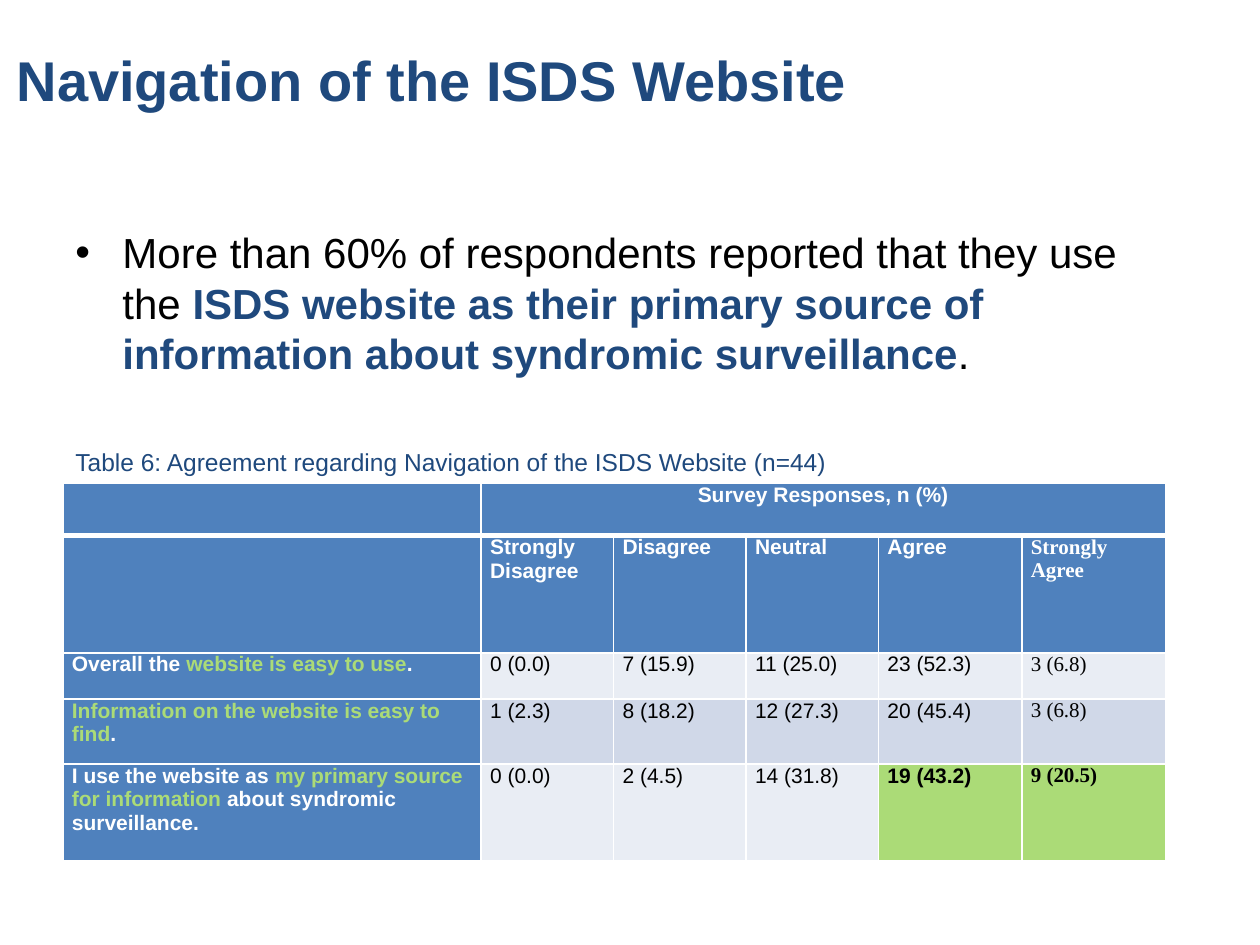
"""Build the slide on navigation of the ISDS website."""
from lxml import etree
from pptx import Presentation
from pptx.dml.color import RGBColor
from pptx.enum.text import MSO_ANCHOR, PP_ALIGN
from pptx.oxml.ns import qn
from pptx.util import Cm, Pt

MIDDLE, TOP = MSO_ANCHOR.MIDDLE, MSO_ANCHOR.TOP
LEFT, CENTER = PP_ALIGN.LEFT, PP_ALIGN.CENTER
NAVY, BLUE, GREEN, WHITE, BLACK = "1F497D", "4F81BD", "ABDB77", "FFFFFF", "000000"
BANDS = ["E9EDF4", "D0D8E8"]


def rgb(value):
    """Turn a hex string into a colour."""
    return RGBColor.from_string(value)


def write(paragraph, text, size, color, accent=NAVY, bold=False, accent_bold=True, name="Arial"):
    """Add runs to a paragraph; parts between asterisks take the accent."""
    for index, part in enumerate(text.split("*")):
        if not part:
            continue
        marked = index % 2 == 1
        run = paragraph.add_run()
        run.text = part
        formats = {"name": name, "size": Pt(size), "bold": accent_bold if marked else bold}
        for key, value in formats.items():
            setattr(run.font, key, value)
        run.font.color.rgb = rgb(accent if marked else color)


prs = Presentation()
prs.slide_width, prs.slide_height = Cm(25.4), Cm(19.05)
slide = prs.slides.add_slide(prs.slide_layouts[5])

title = slide.shapes.title
place = {"left": Cm(0.08), "top": Cm(0), "width": Cm(18.49), "height": Cm(3.18)}
for key, value in place.items():
    setattr(title, key, value)
title.text_frame.vertical_anchor = MIDDLE
title.text_frame.word_wrap = True
heading = title.text_frame.paragraphs[0]
heading.alignment = LEFT
write(heading, "Navigation of the ISDS Website", 32, NAVY, bold=True)

rows = [
    ["", "Survey Responses, n (%)", "", "", "", ""],
    ["", "Strongly Disagree", "Disagree", "Neutral", "Agree", "Strongly Agree"],
    ["Overall the *website is easy to use*.",
     "0 (0.0)", "7 (15.9)", "11 (25.0)", "23 (52.3)", "3 (6.8)"],
    ["*Information on the website is easy to find*.",
     "1 (2.3)", "8 (18.2)", "12 (27.3)", "20 (45.4)", "3 (6.8)"],
    ["I use the website as *my primary source for information *about syndromic surveillance.",
     "0 (0.0)", "2 (4.5)", "14 (31.8)", "19 (43.2)", "9 (20.5)"],
]
column_widths = [8.43, 2.67, 2.67, 2.67, 2.89, 2.89]
row_heights = [1.05, 2.36, 0.93, 1.31, 1.95]
responses = slide.shapes.add_table(
    len(rows), len(column_widths), Cm(1.27), Cm(9.75),
    Cm(sum(column_widths)), Cm(sum(row_heights))).table
for column, width in zip(responses.columns, column_widths):
    column.width = Cm(width)
for row, height in zip(responses.rows, row_heights):
    row.height = Cm(height)
responses.cell(0, 1).merge(responses.cell(0, 5))

for r, texts in enumerate(rows):
    for c, text in enumerate(texts):
        cell = responses.cell(r, c)
        header = r < 2 or c == 0
        highlight = r == 4 and c >= 4
        cell.fill.solid()
        cell.fill.fore_color.rgb = rgb(BLUE if header else GREEN if highlight else BANDS[r % 2])
        edges = {"lnL": 1, "lnR": 1, "lnT": 3 if r == 1 else 1, "lnB": 3 if r == 0 else 1}
        properties = cell._tc.get_or_add_tcPr()
        for position, (edge, points) in enumerate(edges.items()):
            line = etree.Element(qn(f"a:{edge}"), w=str(Pt(points)))
            paint = etree.SubElement(line, qn("a:solidFill"))
            etree.SubElement(paint, qn("a:srgbClr"), val=WHITE)
            properties.insert(position, line)
        if text:
            layout = {"margin_left": Cm(0.18), "margin_right": Cm(0.18),
                      "margin_top": 0, "margin_bottom": 0, "vertical_anchor": TOP}
            for key, value in layout.items():
                setattr(cell, key, value)
            paragraph = cell.text_frame.paragraphs[0]
            paragraph.alignment = CENTER if r == 0 else LEFT
            write(paragraph, text, 12, WHITE if header else BLACK, accent=GREEN,
                  bold=header or highlight, name="Times New Roman" if c == 5 else "Arial")

caption = slide.shapes.add_textbox(Cm(1.27), Cm(8.89), Cm(19.96), Cm(0.86)).text_frame
caption.word_wrap = True
write(caption.paragraphs[0],
      "Table 6: Agreement regarding Navigation of the ISDS Website (n=44)", 14, NAVY)

finding = slide.shapes.add_textbox(Cm(1.27), Cm(4.45), Cm(22.86), Cm(12.57)).text_frame
finding.word_wrap = True
bullet = finding.paragraphs[0]
indents = bullet._p.get_or_add_pPr()
indents.set("marL", str(Cm(0.95)))
indents.set("indent", str(-Cm(0.95)))
etree.SubElement(indents, qn("a:buFont"), typeface="Arial")
etree.SubElement(indents, qn("a:buChar"), char="•")
write(bullet, "More than 60% of respondents reported that they use the *ISDS website as their "
      "primary source of information about syndromic surveillance*.", 24, BLACK)

prs.save("out.pptx")
